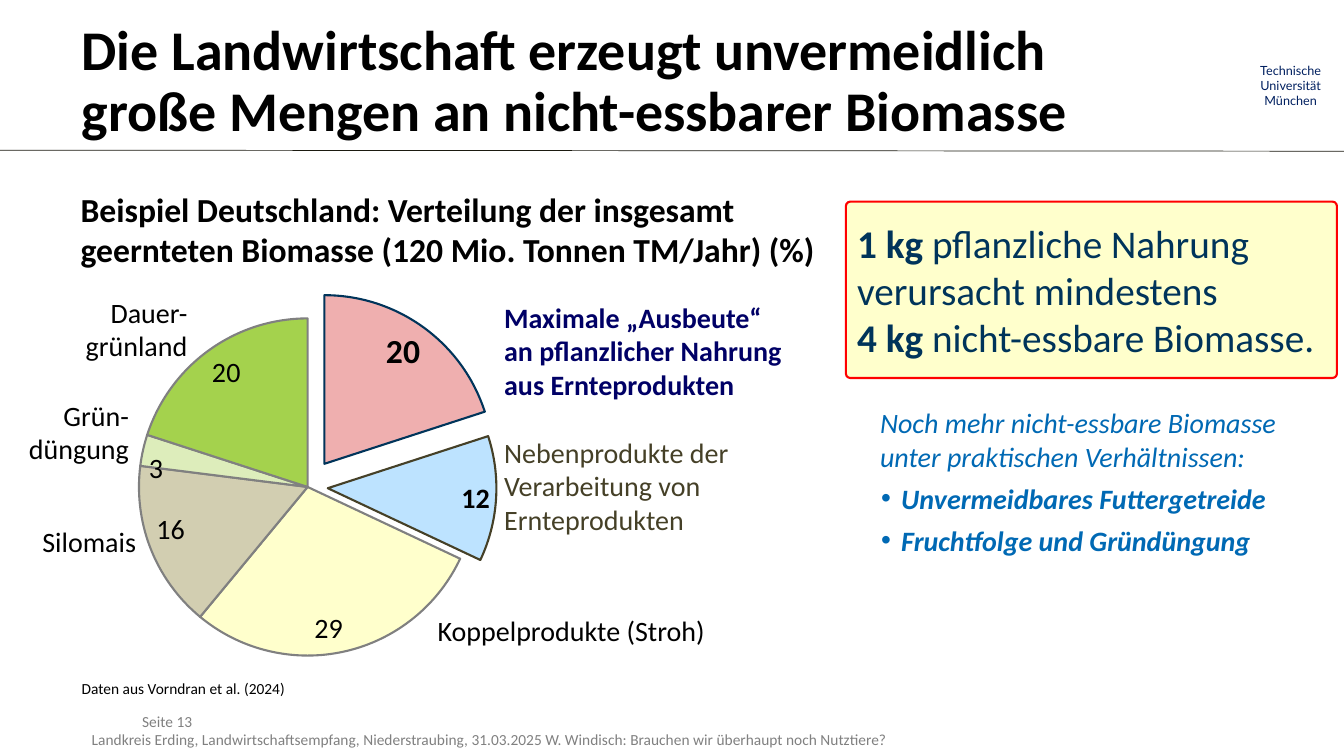
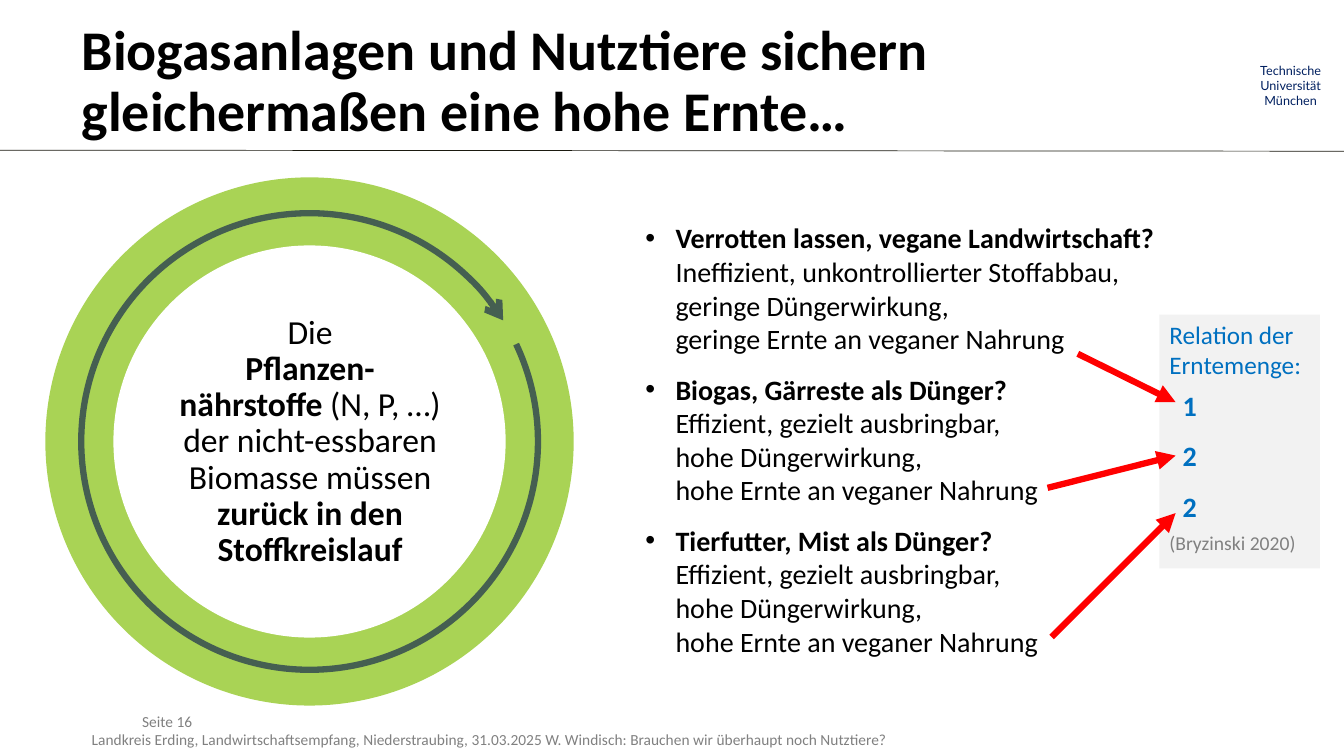
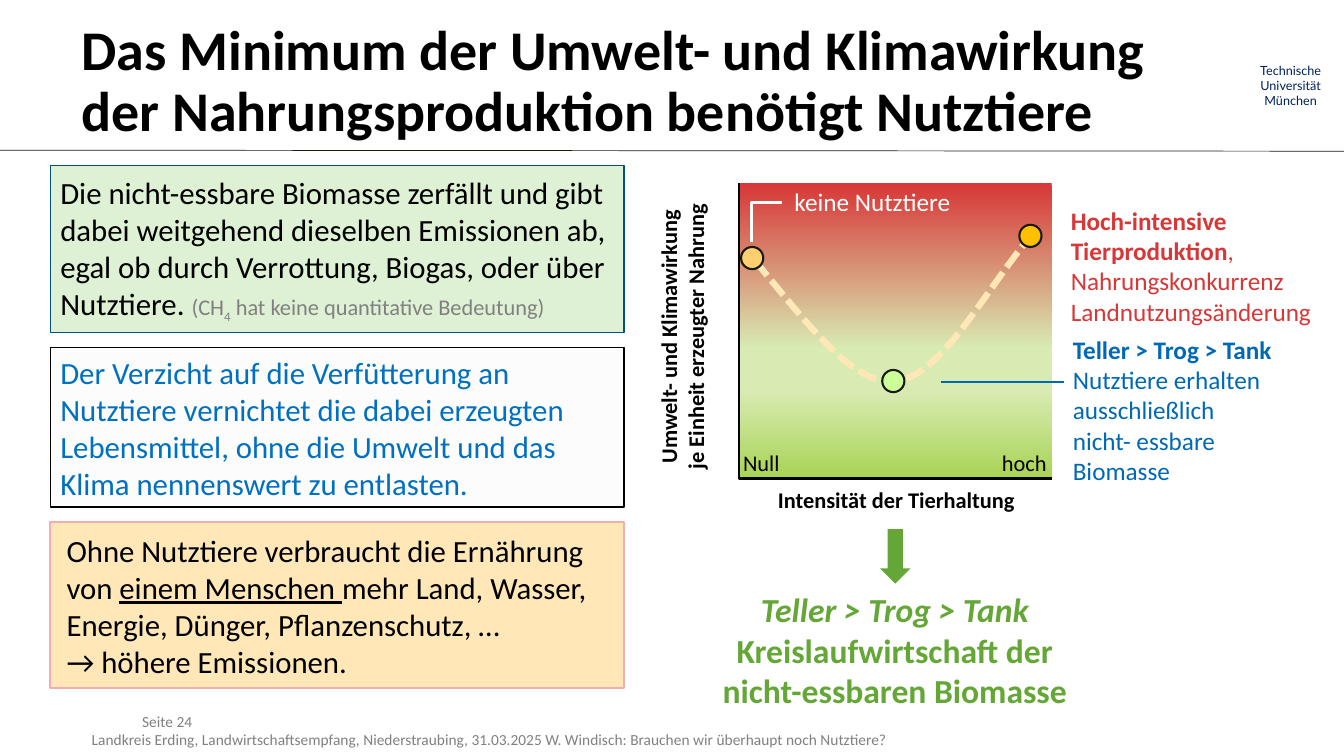
from copy import deepcopy

from lxml import etree
from pptx import Presentation
from pptx.chart.data import CategoryChartData
from pptx.dml.color import RGBColor
from pptx.enum.chart import XL_CHART_TYPE, XL_LABEL_POSITION
from pptx.enum.dml import MSO_LINE
from pptx.enum.shapes import MSO_CONNECTOR, MSO_SHAPE
from pptx.enum.text import MSO_ANCHOR, PP_ALIGN
from pptx.oxml.ns import qn
from pptx.util import Inches, Pt

LEFT, CENTER, RIGHT = PP_ALIGN.LEFT, PP_ALIGN.CENTER, PP_ALIGN.RIGHT
TOP, MIDDLE, BOTTOM = MSO_ANCHOR.TOP, MSO_ANCHOR.MIDDLE, MSO_ANCHOR.BOTTOM
RECT, ROUND, OVAL = MSO_SHAPE.RECTANGLE, MSO_SHAPE.ROUNDED_RECTANGLE, MSO_SHAPE.OVAL
ARC, DOWN = MSO_SHAPE.ARC, MSO_SHAPE.DOWN_ARROW
STRAIGHT, DASH = MSO_CONNECTOR.STRAIGHT, MSO_LINE.SQUARE_DOT
PIE, INSIDE_END = XL_CHART_TYPE.PIE, XL_LABEL_POSITION.INSIDE_END


class Theme:
    font, logo_font = "Calibri", "Lato"
    black, white, gray, rule = "000000", "FFFFFF", "808080", "1B1A10"
    panel, faint = "F2F2F2", "FCFCFC"
    navy, ink, brown, marine = "002060", "00345A", "454027", "004F87"
    indigo, blue, sky = "000066", "0069B4", "0070C0"
    red, crimson, rose = "FF0000", "D73737", "EFAFAF"
    cream, sand, amber, gold = "FFFFCC", "FFE7B8", "FFCF70", "FFC000"
    green, lime, mint, pale, leaf, moss = "A9D355", "CCFF99", "DFF1D4", "D8EBB3", "64A737", "455F51"
    title, big, head, note, body, small, axis = 40, 28, 24, 22, 20, 18, 16
    cite, foot, logo = 14, 11, 9


T = Theme
W, H = 13.33, 7.5
PAD = (0.1, 0.05, 0.1, 0.05)
BOLD, PLAIN = {"bold": True}, {"bold": False}
BASE = dict(size=T.body, color=T.black, font=T.font, bold=False, italic=False, underline=False,
            baseline=0, align=LEFT, before=0, after=0, spacing=None, margin=0, hang=0,
            bullet=None, tab=None)

FOOTER = (.91, 7.07, 11.44, .35)
EVENT = "Landkreis Erding, Landwirtschaftsempfang, Niederstraubing, 31.03.2025"
TALK = "W. Windisch: Brauchen wir überhaupt noch Nutztiere?"
UNIVERSITY = "Technische\nUniversität\nMünchen"

TITLES = {
    13: "Die Landwirtschaft erzeugt unvermeidlich\ngroße Mengen an nicht-essbarer Biomasse",
    16: "Biogasanlagen und Nutztiere sichern\ngleichermaßen eine hohe Ernte…",
    24: "Das Minimum der Umwelt- und Klimawirkung\nder Nahrungsproduktion benötigt Nutztiere",
}

SLICES = [
    (20, T.rose, T.ink, 17, T.head, True),
    (12, "BDE3FF", T.brown, 12, T.body, True),
    (29, T.cream, T.gray, 0, T.body, False),
    (16, "D2CEB1", T.gray, 0, T.body, False),
    (3, "DDEDBB", T.gray, 0, T.body, False),
    (20, "A4D24D", T.gray, 0, T.body, False),
]
PIE_AREA = {"x": .116, "y": .122, "w": .721, "h": .805}
PIE_LABELS = [
    ((4.34, 6.09, 3, .34), "Koppelprodukte (Stroh)", LEFT),
    ((.25, 5.2, 1.1, .34), "Silomais", RIGHT),
    ((.18, 3.95, 1.1, .67), "Grün-\ndüngung", RIGHT),
    ((.76, 2.93, 1.1, .67), "Dauer-\ngrünland", RIGHT),
]
YIELD = [
    {"runs": "Maximale „Ausbeute“\nan pflanzlicher Nahrung\naus Ernteprodukten",
     "color": T.indigo, "bold": True},
    {"runs": "Nebenprodukte der\nVerarbeitung von\nErnteprodukten",
     "color": T.brown, "before": 24.4},
]
RATIO = [[("1 kg ", BOLD), "pflanzliche Nahrung verursacht mindestens\n",
          ("4 kg ", BOLD), "nicht-essbare Biomasse."]]
POINT = {"margin": .4, "hang": -.2, "bullet": "•", "bold": True}
PRACTICE = [
    {"runs": "Noch mehr nicht-essbare Biomasse unter praktischen Verhältnissen:", "margin": .19},
    {"runs": "Unvermeidbares Futtergetreide", **POINT},
    {"runs": "Fruchtfolge und Gründüngung", **POINT},
]

CYCLE = [["Die\n", ("Pflanzen-\nnährstoffe ", BOLD),
          "(N, P, …)\nder nicht-essbaren Biomasse müssen ",
          ("zurück in den Stoffkreislauf", BOLD)]]
EFFICIENT = "Effizient, gezielt ausbringbar,\nhohe Düngerwirkung,\nhohe Ernte an veganer Nahrung"
OPTIONS = [
    ("Verrotten lassen, vegane Landwirtschaft?",
     "Ineffizient, unkontrollierter Stoffabbau,\ngeringe Düngerwirkung,\n"
     "geringe Ernte an veganer Nahrung"),
    ("Biogas, Gärreste als Dünger?", EFFICIENT),
    ("Tierfutter, Mist als Dünger?", EFFICIENT),
]
HARVEST = ["1", "2", "2"]
ARROWS = [((10.69, 3.51), 3.99), ((10.39, 4.84), 4.52), ((10.43, 6.32), 5.09)]
ARROW_END = 11.66

FINE = {"size": T.axis, "color": T.gray}
NOTES = [
    (1.66, T.mint, T.marine, 1, T.black, PAD,
     [["Die nicht-essbare Biomasse zerfällt und gibt dabei weitgehend dieselben Emissionen ab, "
       "egal ob durch Verrottung, Biogas, oder über Nutztiere. ", ("(CH", FINE),
       ("4", {**FINE, "baseline": -25000}), (" hat keine quantitative Bedeutung)", FINE)]]),
    (1.58, T.faint, T.black, 1, T.sky, PAD,
     ["Der Verzicht auf die Verfütterung an Nutztiere vernichtet die dabei erzeugten "
      "Lebensmittel, ohne die Umwelt und das Klima nennenswert zu entlasten."]),
    (1.65, T.sand, T.rose, 1.5, T.black, (.16, .05, .08, .05),
     [["Ohne Nutztiere verbraucht die Ernährung von ", ("einem Menschen ", {"underline": True}),
       "mehr Land, Wasser, Energie, Dünger, Pflanzenschutz, …"], "→ höhere Emissionen."]),
]
PLOT = (7.33, 1.82, 3.1, 2.93)
GRADIENT = [(0, T.crimson), (56, T.pale), (70, T.pale), (100, T.green)]
CURVE = [
    [(7.49, 2.59), (8, 3.2), (8.5, 3.88), (8.92, 3.78)],
    [(8.92, 3.78), (9.34, 3.68), (9.7, 3.01), (10.15, 2.43)],
]
DOTS = [(10.22, 2.34, T.gold), (8.86, 3.78, T.lime), (7.46, 2.56, T.amber)]
DOT = .22
PLOT_LABELS = [
    ((7.88, 1.85, 2.34, .3), ["keine Nutztiere"],
     dict(size=T.small, color=T.white, anchor=MIDDLE)),
    ((10.62, 2.03, 2.65, 1.21),
     [[("Hoch-intensive\nTierproduktion", BOLD), ",\nNahrungskonkurrenz\nLandnutzungsänderung"]],
     dict(size=T.small, color=T.crimson, anchor=MIDDLE)),
    ((10.64, 3.31, 1.99, 1.51),
     [[("Teller > Trog > Tank\n", BOLD),
       "Nutztiere erhalten\nausschließlich nicht- essbare Biomasse"]],
     dict(size=T.small, color=T.blue, anchor=MIDDLE)),
    ((7.37, 4.46, .6, .27), ["Null"], dict(size=T.axis)),
    ((9.52, 4.46, .86, .27), ["hoch"], dict(size=T.axis, align=RIGHT)),
    ((7.34, 4.82, 3.1, .27), ["Intensität der Tierhaltung"],
     dict(size=T.axis, align=CENTER, bold=True)),
    ((5.42, 3.07, 2.69, .54), ["Umwelt- und Klimawirkung\nje Einheit erzeugter Nahrung"],
     dict(size=T.axis, align=CENTER, bold=True, turn=270)),
    ((6.87, 5.84, 4.01, 1.21),
     [[("Teller > Trog > Tank\n", {"italic": True}),
       "Kreislaufwirtschaft der\nnicht-essbaren Biomasse"]],
     dict(size=T.head, color=T.leaf, align=CENTER, bold=True, anchor=MIDDLE)),
]


def rgb(color):
    return RGBColor.from_string(color)


def child(parent, tag, **attrs):
    return etree.SubElement(parent, qn(tag), {k: str(v) for k, v in attrs.items()})


def style_font(font, look):
    font.name, font.size = look["font"], Pt(look["size"])
    font.bold, font.italic, font.underline = look["bold"], look["italic"], look["underline"]
    font.color.rgb = rgb(look["color"])


def add_runs(p, runs, look):
    for run in [runs] if isinstance(runs, str) else runs:
        words, change = (run, {}) if isinstance(run, str) else run
        own = {**look, **change}
        for i, line in enumerate(words.split("\n")):
            if i:
                p.add_line_break()
            if line:
                r = p.add_run()
                r.text = line
                style_font(r.font, own)
                if own["baseline"]:
                    r._r.get_or_add_rPr().set("baseline", str(own["baseline"]))
    for br in p._p.findall(qn("a:br")):
        br.insert(0, deepcopy(br.getprevious().find(qn("a:rPr"))))


def text(sp, paras, anchor=TOP, inset=(0, 0, 0, 0), **fmt):
    tf = sp.text_frame
    tf.word_wrap, tf.vertical_anchor = True, anchor
    tf.margin_left, tf.margin_top, tf.margin_right, tf.margin_bottom = map(Inches, inset)
    for i, para in enumerate(paras):
        para = para if isinstance(para, dict) else {"runs": para}
        look = {**BASE, **fmt, **para}
        p = tf.add_paragraph() if i else tf.paragraphs[0]
        p.alignment, p.line_spacing = look["align"], look["spacing"]
        p.space_before, p.space_after = Pt(look["before"] if i else 0), Pt(look["after"])
        pPr = p._p.get_or_add_pPr()
        pPr.set("marL", str(Inches(look["margin"])))
        pPr.set("indent", str(Inches(look["hang"])))
        if look["bullet"]:
            child(pPr, "a:buFont", typeface="Arial")
            child(pPr, "a:buChar", char=look["bullet"])
        if look["tab"]:
            child(child(pPr, "a:tabLst"), "a:tab", pos=Inches(look["tab"]), algn="r")
        add_runs(p, look["runs"], look)
    return sp


def label(s, at, paras, turn=0, **fmt):
    sp = text(s.shapes.add_textbox(*map(Inches, at)), paras, **fmt)
    sp.rotation = turn


def paint(sp, fill=None, line=None, width=1):
    sp.shadow.inherit = False
    if fill:
        sp.fill.solid()
        sp.fill.fore_color.rgb = rgb(fill)
    else:
        sp.fill.background()
    if line:
        sp.line.color.rgb, sp.line.width = rgb(line), Pt(width)
    else:
        sp.line.fill.background()
    return sp


def shape(s, kind, at, adj=(), **look):
    sp = s.shapes.add_shape(kind, *map(Inches, at))
    for i, value in enumerate(adj):
        sp.adjustments[i] = value
    return paint(sp, **look)


def arrowhead(sp, kind):
    child(sp._element.spPr.find(qn("a:ln")), "a:tailEnd", type=kind)


def connect(s, start, end, color, width):
    line = s.shapes.add_connector(STRAIGHT, *map(Inches, start + end))
    line.line.color.rgb, line.line.width = rgb(color), Pt(width)
    child(line._element.spPr, "a:effectLst")
    return line


def polyline(s, points, color, width):
    points = [(Inches(x), Inches(y)) for x, y in points]
    pen = s.shapes.build_freeform(*points[0])
    pen.add_line_segments(points[1:], close=False)
    return paint(pen.convert_to_shape(), line=color, width=width)


def bezier(knots, steps=16):
    for i in range(steps + 1):
        t = i / steps
        weights = ((1 - t) ** 3, 3 * t * (1 - t) ** 2, 3 * t * t * (1 - t), t ** 3)
        yield tuple(sum(w * k[axis] for w, k in zip(weights, knots)) for axis in (0, 1))


def new_slide(prs, page):
    s = prs.slides.add_slide(prs.slide_layouts[6])
    label(s, FOOTER, [f"\tSeite {page}", f"{EVENT}\t{TALK}"],
          size=T.foot, color=T.gray, anchor=MIDDLE, tab=FOOTER[2] - .01)
    label(s, (12.39, .62, .82, .46), [UNIVERSITY],
          size=T.logo, font=T.logo_font, color=T.navy, align=CENTER)
    connect(s, (0, 1.49), (W, 1.5), T.rule, .5)
    label(s, (.81, .18, 11.49, 1.28), [TITLES[page]],
          size=T.title, bold=True, spacing=.9, anchor=MIDDLE)
    return s


def add_pie(s):
    data = CategoryChartData(number_format="0")
    data.categories = [str(i + 1) for i in range(len(SLICES))]
    data.add_series("Series 1", [row[0] for row in SLICES])
    chart = s.shapes.add_chart(PIE, *map(Inches, (.84, 2.65, 4.64, 4.16)), data).chart
    chart.has_title = chart.has_legend = False
    style_font(chart.font, BASE)
    plot = chart.plots[0]
    plot.vary_by_categories = False
    series = plot.series[0]
    for i, (_, fill, line, explode, size, bold) in enumerate(SLICES):
        point = series.points[i]
        point.format.fill.solid()
        point.format.fill.fore_color.rgb = rgb(fill)
        point.format.line.color.rgb, point.format.line.width = rgb(line), Pt(1.5)
        style_font(point.data_label.font, {**BASE, "size": size, "bold": bold})
        point.data_label.position = INSIDE_END
        if explode:
            explosion = etree.Element(qn("c:explosion"), val=str(explode))
            series._element.findall(qn("c:dPt"))[i].find(qn("c:spPr")).addprevious(explosion)
    area = chart._chartSpace.chart.plotArea
    for old in area.findall(qn("c:layout")):
        area.remove(old)
    layout = etree.Element(qn("c:layout"))
    area.insert(0, layout)
    manual = child(layout, "c:manualLayout")
    child(manual, "c:layoutTarget", val="inner")
    for side in "xy":
        child(manual, f"c:{side}Mode", val="edge")
    for side, share in PIE_AREA.items():
        child(manual, f"c:{side}", val=share)


def biomass_slide(prs):
    s = new_slide(prs, 13)
    add_pie(s)
    label(s, (.8, 1.87, 7.45, .81),
          ["Beispiel Deutschland: Verteilung der insgesamt geernteten Biomasse "
           "(120 Mio. Tonnen TM/Jahr) (%)"], size=T.head, bold=True)
    label(s, (5, 2.98, 3.01, 2.36), YIELD)
    label(s, (.81, 6.73, 2.3, .19), ["Daten aus Vorndran et al. (2024)"],
          size=T.foot, anchor=BOTTOM)
    for at, words, align in PIE_LABELS:
        label(s, at, [words], align=align)
    box = shape(s, ROUND, (8.39, 2, 4.87, 1.75), (.025,), fill=T.cream, line=T.red, width=1.5)
    text(box, RATIO, size=T.big, color=T.ink, anchor=MIDDLE, inset=PAD)
    label(s, (8.44, 3.9, 4.77, 1.75), PRACTICE, color=T.blue, italic=True, after=6,
          anchor=MIDDLE, inset=PAD)


def cycle_slide(prs):
    s = new_slide(prs, 16)
    cx, cy = 3.07, 4.38
    for size, fill in ((5.24, T.green), (3.89, T.white)):
        shape(s, OVAL, (cx - size / 2, cy - size / 2, size, size), fill=fill)
    size = 4.53
    arc = shape(s, ARC, (cx - size / 2, cy - size / 2, size, size), (121.53, 117.46),
                line=T.moss, width=4.5)
    arc.rotation = 132.2
    arrowhead(arc, "arrow")
    label(s, (1.53, 2.85, 3.09, 3.07), CYCLE, size=T.head, align=CENTER, spacing=.9,
          anchor=MIDDLE, inset=PAD)
    label(s, (6.4, 2.19, 5.35, 4.38),
          [[(head + "\n", BOLD), rest] for head, rest in OPTIONS],
          margin=.3, hang=-.3, bullet="•", after=12)
    values = [{"runs": v, "size": T.body, "bold": True, "before": 6, "after": 6, "margin": .13}
              for v in HARVEST]
    panel = shape(s, RECT, (11.5, 3.12, 1.59, 2.52), fill=T.panel)
    text(panel, ["Relation der Erntemenge:", *values,
                 {"runs": "(Bryzinski 2020)", "size": T.cite, "color": T.gray}],
         size=T.small, color=T.sky, inset=PAD)
    for start, y in ARROWS:
        arrowhead_line = connect(s, start, (ARROW_END, y), T.red, 4.5)
        ln = arrowhead_line._element.spPr.find(qn("a:ln"))
        child(ln, "a:tailEnd", type="triangle")


def climate_slide(prs):
    s = new_slide(prs, 24)
    x, y, w, h = PLOT
    field = shape(s, RECT, PLOT)
    field.fill.gradient()
    field.fill.gradient_angle = 270
    stops = field._element.spPr.find(".//" + qn("a:gsLst"))
    for old in list(stops):
        stops.remove(old)
    for share, color in GRADIENT:
        child(child(stops, "a:gs", pos=share * 1000), "a:srgbClr", val=color)
    points = [point for knots in CURVE for point in bezier(knots)]
    polyline(s, points, T.sand, 4.5).line.dash_style = DASH
    polyline(s, [(x, y), (x, y + h), (x + w, y + h)], T.black, 2)
    for at, paras, fmt in PLOT_LABELS:
        label(s, at, paras, **fmt)
    for cx, cy, fill in DOTS:
        shape(s, OVAL, (cx - DOT / 2, cy - DOT / 2, DOT, DOT), fill=fill, line=T.rule, width=1.5)
    connect(s, (10.55, 3.79), (9.33, 3.79), T.blue, 2)
    polyline(s, [(7.45, 2.4), (7.45, 2.01), (7.76, 2.01)], T.white, 2)
    shape(s, DOWN, (8.73, 5.25, .3, .54), fill=T.leaf)
    top, gap = 1.64, .15
    for height, fill, line, width, color, inset, paras in NOTES:
        note = shape(s, RECT, (.5, top, 5.69, height), fill=fill, line=line, width=width)
        text(note, paras, size=T.note, color=color, anchor=MIDDLE, inset=inset)
        top += height + gap


def main():
    prs = Presentation()
    prs.slide_width, prs.slide_height = Inches(W), Inches(H)
    biomass_slide(prs)
    cycle_slide(prs)
    climate_slide(prs)
    prs.save("out.pptx")


if __name__ == "__main__":
    main()
